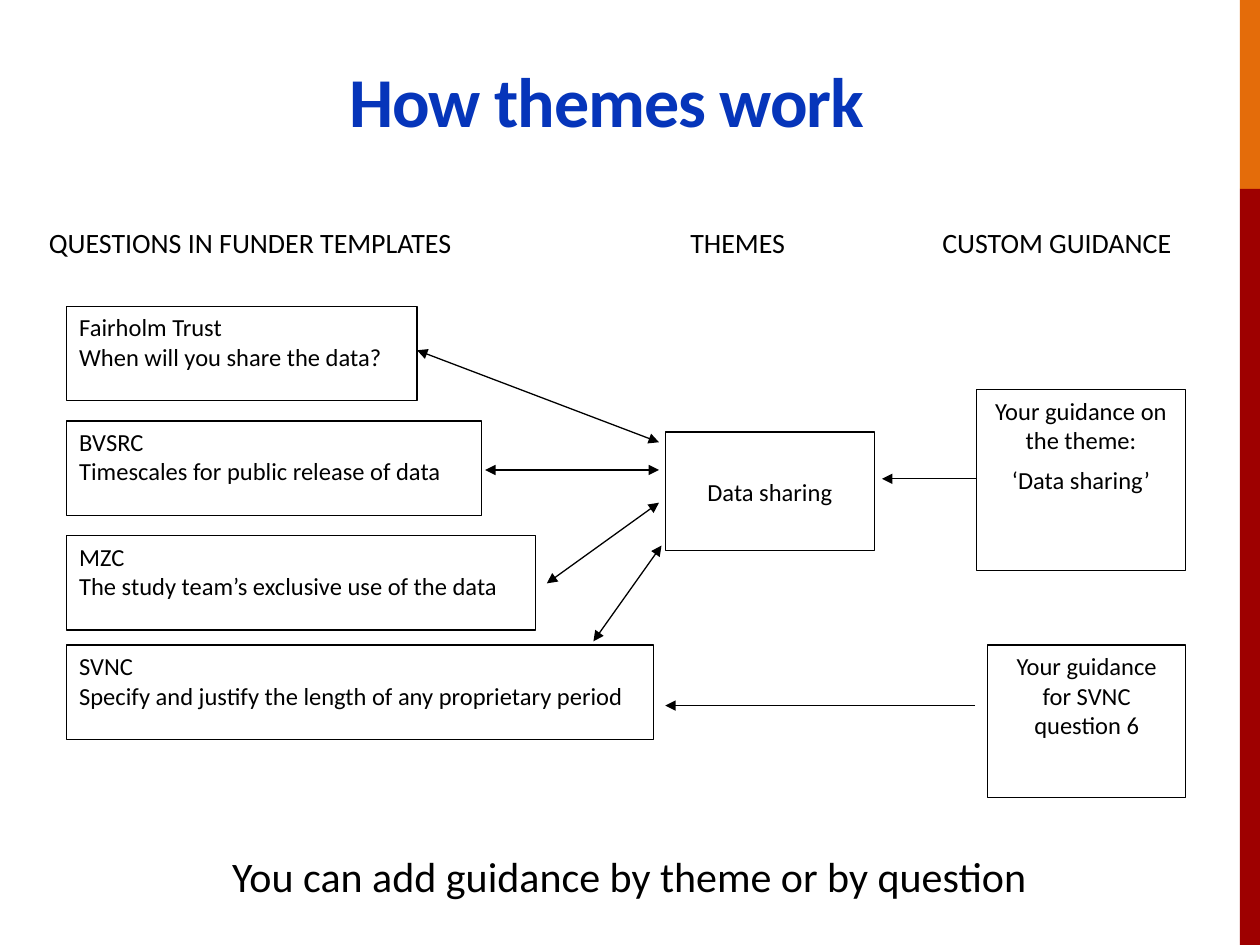
from lxml import etree
from pptx import Presentation
from pptx import util as u
from pptx.dml.color import RGBColor
from pptx.enum import shapes, text
from pptx.oxml.ns import qn

HUES = {"ink": "000000", "paper": "FFFFFF", "title": "0635BA",
        "orange": "E46C0A", "red": "9E0000"}
LEFT, MID = text.PP_ALIGN.LEFT, text.PP_ALIGN.CENTER
TOP, CORE, BASE = (text.MSO_ANCHOR.TOP, text.MSO_ANCHOR.MIDDLE,
                   text.MSO_ANCHOR.BOTTOM)


def hue(name):
    return RGBColor.from_string(HUES[name])


class Deck:
    font = "Calibri"

    def __init__(self):
        self.prs = Presentation()
        self.prs.slide_width = u.Inches(10)
        self.prs.slide_height = u.Inches(7.5)
        self.slide = self.prs.slides.add_slide(self.prs.slide_layouts[5])

    def style(self, shape, words, size, align=LEFT, anchor=TOP,
              color="ink", bold=False, gap=0):
        frame = shape.text_frame
        frame.word_wrap = True
        frame.vertical_anchor = anchor
        frame.text = words
        for para in frame.paragraphs:
            para.alignment = align
            para.space_before = u.Pt(gap)
            for run in para.runs:
                run.font.name = self.font
                run.font.size = u.Pt(size)
                run.font.bold = bold
                run.font.color.rgb = hue(color)
        return frame

    def title(self, words, *area):
        shape = self.slide.shapes.title
        shape.left, shape.top, shape.width, shape.height = map(u.Inches, area)
        frame = self.style(shape, words, 40, MID, BASE, "title", True)
        frame.margin_bottom = 0
        frame.paragraphs[0].runs[0].font._element.set("spc", "-60")

    def rect(self, area, fill):
        shape = self.slide.shapes.add_shape(
            shapes.MSO_SHAPE.RECTANGLE, *map(u.Inches, area))
        shape.shadow.inherit = False
        shape.fill.solid()
        shape.fill.fore_color.rgb = hue(fill)
        shape.line.fill.background()
        return shape

    def box(self, words, *area, **looks):
        shape = self.rect(area, "paper")
        shape.line.color.rgb = hue("ink")
        shape.line.width = u.Pt(0.75)
        self.style(shape, words, 14, **looks)

    def label(self, words, size, *area, align=LEFT, anchor=TOP, tabs=()):
        shape = self.slide.shapes.add_textbox(*map(u.Inches, area))
        frame = self.style(shape, words, size, align, anchor)
        if tabs:
            props = frame.paragraphs[0]._p.get_or_add_pPr()
            stops = etree.SubElement(props, qn("a:tabLst"))
            for stop in tabs:
                etree.SubElement(stops, qn("a:tab"),
                                 pos=str(u.Inches(stop)), algn="l")

    def arrow(self, *ends, both=True):
        line = self.slide.shapes.add_connector(
            shapes.MSO_CONNECTOR.STRAIGHT, *map(u.Inches, ends))
        line.line.color.rgb = hue("ink")
        line.line.width = u.Pt(0.75)
        props = line._element.spPr
        pen = props.find(qn("a:ln"))
        for tag in ("a:headEnd", "a:tailEnd") if both else ("a:tailEnd",):
            etree.SubElement(pen, qn(tag), type="triangle")
        etree.SubElement(props, qn("a:effectLst"))


def main():
    deck = Deck()
    deck.rect((9.84, 0, 0.16, 1.5), "orange")
    deck.rect((9.84, 1.5, 0.16, 6), "red")
    deck.title("How themes work", -0.02, 0.32, 9.67, 0.8)
    deck.label("QUESTIONS IN FUNDER TEMPLATES\tTHEMES\tCUSTOM GUIDANCE", 16,
               0.29, 1.72, 9.39, 0.4, anchor=CORE, tabs=(5.09, 7.09))

    asks = [
        ("Fairholm Trust", "When will you share the data?", 2.43, 2.78),
        ("BVSRC", "Timescales for public release of data", 3.34, 3.29),
        ("MZC", "The study team’s exclusive use of the data", 4.25, 3.72),
        ("SVNC", "Specify and justify the length of any proprietary period",
         5.12, 4.66),
    ]
    for funder, ask, top, width in asks:
        deck.box(f"{funder}\n{ask}", 0.53, top, width, 0.75)

    deck.box("Data sharing", 5.28, 3.43, 1.66, 0.94, align=MID, anchor=CORE)
    deck.box("Your guidance on the theme:\n‘Data sharing’",
             7.75, 3.09, 1.66, 1.44, align=MID, gap=6)
    deck.box("Your guidance for SVNC question 6",
             7.84, 5.12, 1.57, 1.21, align=MID, gap=6)

    for ends in [(3.31, 2.78, 5.23, 3.51), (3.85, 3.73, 5.23, 3.73),
                 (4.34, 4.63, 5.23, 3.99), (4.71, 5.09, 5.25, 4.33)]:
        deck.arrow(*ends)
    deck.arrow(7.75, 3.8, 7, 3.8, both=False)
    deck.arrow(7.74, 5.6, 5.28, 5.6, both=False)

    deck.label("You can add guidance by theme or by question", 24,
               0.38, 6.7, 9.23, 0.68, align=MID)
    deck.prs.save("out.pptx")


if __name__ == "__main__":
    main()
